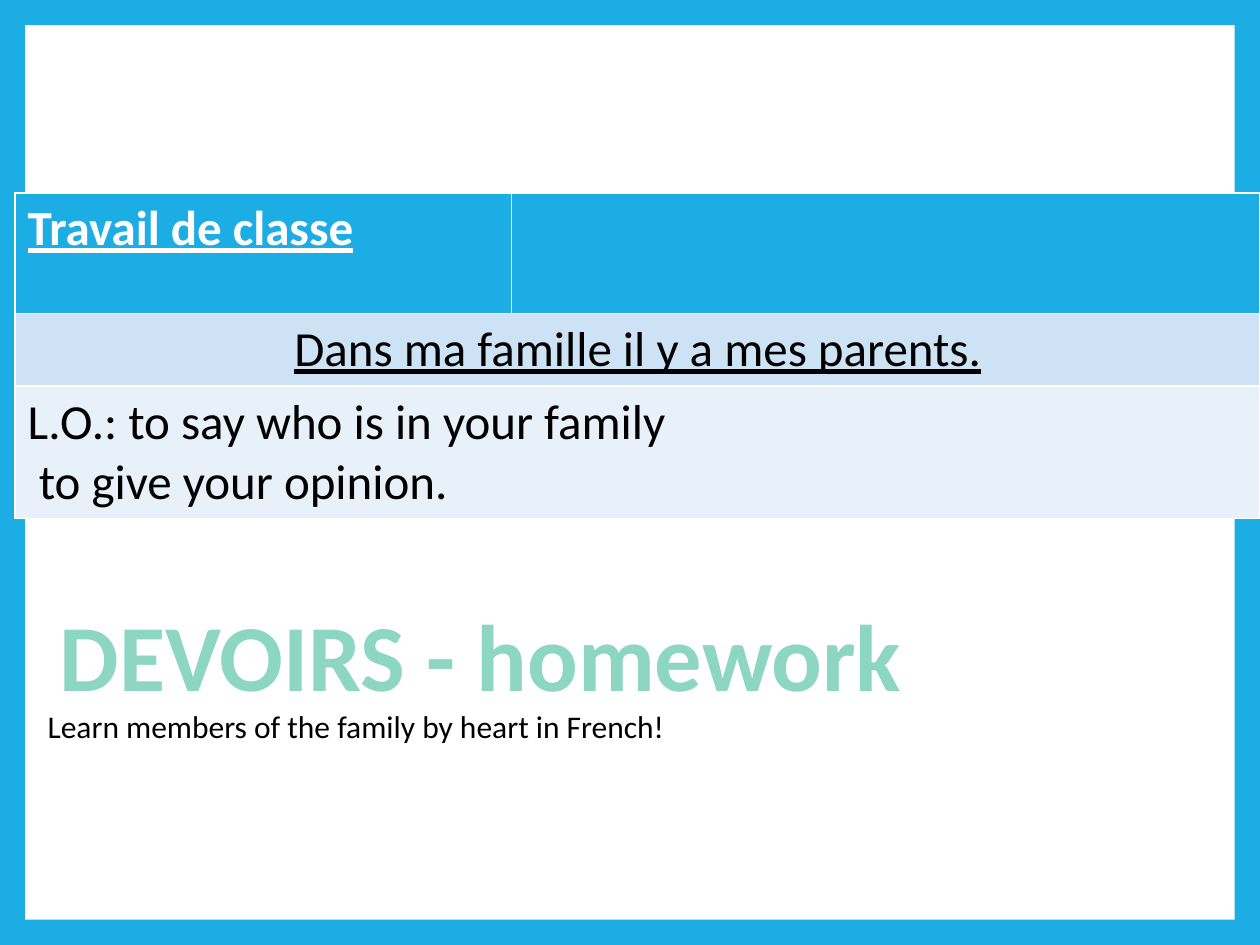
from dataclasses import dataclass

from pptx import Presentation
from pptx.dml.color import RGBColor
from pptx.enum.shapes import MSO_SHAPE
from pptx.enum.text import PP_ALIGN
from pptx.util import Inches, Pt


@dataclass(frozen=True)
class Theme:
    font: str = "Calibri"
    blue: str = "1CADE4"
    pale_blue: str = "CDE3F5"
    paler_blue: str = "E8F1FA"
    mint: str = "8DD6C1"
    white: str = "FFFFFF"
    black: str = "000000"
    heading: int = 54
    lesson: int = 28
    body: int = 18


theme = Theme()


def paint(fill, color):
    fill.solid()
    fill.fore_color.rgb = RGBColor.from_string(color)


def write(text_frame, text, size, color, bold=False, underline=False, align=PP_ALIGN.LEFT):
    """Fill a text frame, one paragraph for each line of text."""
    text_frame.text = text
    for paragraph in text_frame.paragraphs:
        paragraph.alignment = align
        font = paragraph.font
        font.name = theme.font
        font.size = Pt(size)
        font.bold = bold
        font.underline = underline
        font.color.rgb = RGBColor.from_string(color)


presentation = Presentation()
presentation.slide_width = Inches(10)
presentation.slide_height = Inches(7.5)
slide = presentation.slides.add_slide(presentation.slide_layouts[6])
paint(slide.background.fill, theme.blue)

# White page inside the blue frame
page = slide.shapes.add_shape(
    MSO_SHAPE.RECTANGLE, Inches(0.2), Inches(0.2), Inches(9.6), Inches(7.1))
page.shadow.inherit = False
paint(page.fill, theme.white)
page.line.fill.background()

# Lesson table: the default style supplies the white cell borders
table = slide.shapes.add_table(
    3, 2, Inches(0.12), Inches(1.53), Inches(9.88), Inches(2.56)).table
for column, width in zip(table.columns, (3.94, 5.94)):
    column.width = Inches(width)
for row, height, color in zip(
        table.rows, (0.96, 0.55, 1.05), (theme.blue, theme.pale_blue, theme.paler_blue)):
    row.height = Inches(height)
    for cell in row.cells:
        paint(cell.fill, color)
for row_index in (1, 2):
    table.cell(row_index, 0).merge(table.cell(row_index, 1))

write(table.cell(0, 0).text_frame, "Travail de classe",
      theme.lesson, theme.white, bold=True, underline=True)
write(table.cell(1, 0).text_frame, "Dans ma famille il y a mes parents.",
      theme.lesson, theme.black, underline=True, align=PP_ALIGN.CENTER)
write(table.cell(2, 0).text_frame,
      "L.O.: to say who is in your family\n to give your opinion.",
      theme.lesson, theme.black)

# Homework
heading = slide.shapes.add_textbox(Inches(0.12), Inches(4.69), Inches(7.39), Inches(1.01))
heading.text_frame.word_wrap = False
write(heading.text_frame, "DEVOIRS - homework",
      theme.heading, theme.mint, bold=True, align=PP_ALIGN.CENTER)

task = slide.shapes.add_textbox(Inches(0.28), Inches(5.56), Inches(6.54), Inches(0.4))
task.text_frame.word_wrap = True
write(task.text_frame, "Learn members of the family by heart in French!",
      theme.body, theme.black)

presentation.save("out.pptx")
